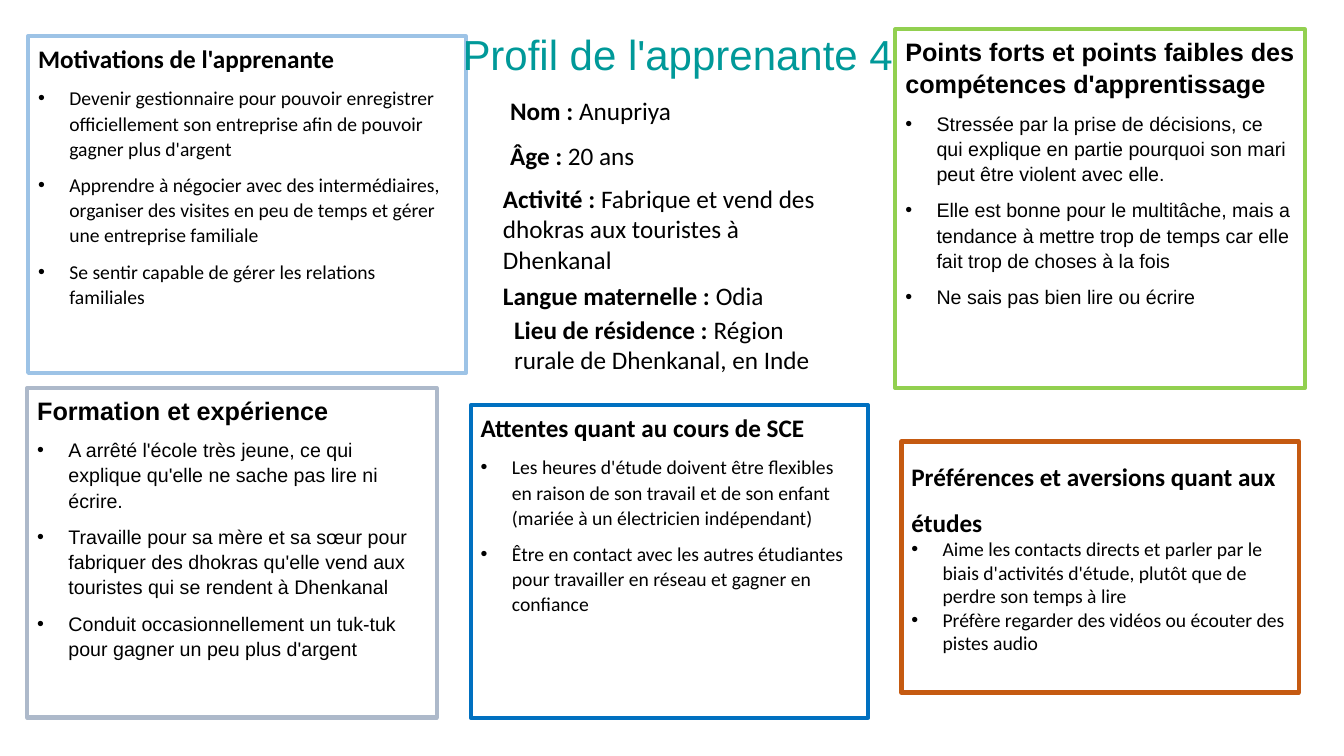
from dataclasses import dataclass

from lxml.etree import SubElement
from pptx import Presentation
from pptx.dml.color import RGBColor
from pptx.enum.shapes import MSO_SHAPE
from pptx.enum.text import MSO_ANCHOR, MSO_AUTO_SIZE, PP_ALIGN
from pptx.oxml.ns import qn
from pptx.util import Inches, Pt


@dataclass(frozen=True)
class Theme:
    ink: str = "000000"
    paper: str = "FFFFFF"
    title: str = "009999"
    attentes: str = "0070C0"
    motivations: str = "9DC3E6"
    points: str = "92D050"
    formation: str = "ADB9CA"
    preferences: str = "C55A11"
    sans: str = "Arial"
    body: str = "Calibri"
    title_size: int = 30
    heading_size: int = 18
    bullet_size: int = 14
    border: int = 3


theme = Theme()
presentation = Presentation()
presentation.slide_width = Inches(13.33)
presentation.slide_height = Inches(7.5)
slide = presentation.slides.add_slide(presentation.slide_layouts[6])


def place(left, top, width, height):
    """Turn percentages of the slide's width and height into lengths."""
    across, down = presentation.slide_width / 100, presentation.slide_height / 100
    return int(left * across), int(top * down), int(width * across), int(height * down)


def style(run, font, size, color, bold=False):
    run.font.name = font
    run.font.size = Pt(size)
    run.font.bold = bold
    run.font.color.rgb = RGBColor.from_string(color)


# Each panel: place, border, font, (heading spacing, bullet spacing, space after), lines
airy = (1.07, 1.07, 8)
compact = (1.5, 1.0, 0)
panels = [
    ((35.03, 53.6, 29.56, 41.33), theme.attentes, theme.body, airy, [
        "Attentes quant au cours de SCE",
        "Les heures d'étude doivent être flexibles en raison de son travail "
        "et de son enfant (mariée à un électricien indépendant)",
        "Être en contact avec les autres étudiantes pour travailler en réseau "
        "et gagner en confiance",
    ]),
    ((2.1, 4.8, 32.56, 44.53), theme.motivations, theme.body, airy, [
        "Motivations de l'apprenante",
        "Devenir gestionnaire pour pouvoir enregistrer officiellement son "
        "entreprise afin de pouvoir gagner plus d'argent",
        "Apprendre à négocier avec des intermédiaires, organiser des visites "
        "en peu de temps et gérer une entreprise familiale",
        "Se sentir capable de gérer les relations familiales",
    ]),
    ((66.62, 3.87, 30.46, 47.47), theme.points, theme.sans, airy, [
        "Points forts et points faibles des compétences d'apprentissage",
        "Stressée par la prise de décisions, ce qui explique en partie "
        "pourquoi son mari peut être violent avec elle.",
        "Elle est bonne pour le multitâche, mais a tendance à mettre trop de "
        "temps car elle fait trop de choses à la fois",
        "Ne sais pas bien lire ou écrire",
    ]),
    ((2.03, 51.33, 30.46, 43.6), theme.formation, theme.sans, airy, [
        "Formation et expérience",
        "A arrêté l'école très jeune, ce qui explique qu'elle ne sache pas "
        "lire ni écrire.",
        "Travaille pour sa mère et sa sœur pour fabriquer des dhokras qu'elle "
        "vend aux touristes qui se rendent à Dhenkanal",
        "Conduit occasionnellement un tuk-tuk pour gagner un peu plus d'argent",
    ]),
    ((67.07, 58.4, 29.56, 33.2), theme.preferences, theme.body, compact, [
        "Préférences et aversions quant aux études",
        "Aime les contacts directs et parler par le biais d'activités d'étude, "
        "plutôt que de perdre son temps à lire",
        "Préfère regarder des vidéos ou écouter des pistes audio",
    ]),
]

for position, border, font, spacing, lines in panels:
    heading_spacing, bullet_spacing, space_after = spacing
    panel = slide.shapes.add_shape(MSO_SHAPE.RECTANGLE, *place(*position))
    panel.shadow.inherit = False
    panel.fill.solid()
    panel.fill.fore_color.rgb = RGBColor.from_string(theme.paper)
    panel.line.color.rgb = RGBColor.from_string(border)
    panel.line.width = Pt(theme.border)
    frame = panel.text_frame
    frame.word_wrap = True
    frame.vertical_anchor = MSO_ANCHOR.TOP
    frame.text = "\n".join(lines)
    for number, paragraph in enumerate(frame.paragraphs):
        is_heading = number == 0
        paragraph.alignment = PP_ALIGN.LEFT
        paragraph.line_spacing = heading_spacing if is_heading else bullet_spacing
        paragraph.space_after = Pt(space_after)
        size = theme.heading_size if is_heading else theme.bullet_size
        style(paragraph.runs[0], font, size, theme.ink, is_heading)
        if not is_heading:
            properties = paragraph._p.get_or_add_pPr()
            properties.set("marL", str(Inches(0.31)))
            properties.set("indent", str(-Inches(0.31)))
            SubElement(properties, qn("a:buFont"), typeface=theme.sans)
            SubElement(properties, qn("a:buChar"), char="•")

facts = [
    ((37.21, 12, 28.21, 5.33), "Nom :", " Anupriya"),
    ((37.21, 17.87, 23.78, 5.33), "Âge :", " 20 ans"),
    ((36.68, 23.6, 25.88, 9.47), "Activité :",
     " Fabrique et vend des dhokras aux touristes à Dhenkanal"),
    ((36.68, 36.4, 25.88, 5.33), "Langue maternelle :", " Odia"),
    ((37.51, 40.93, 25.88, 9.47), "Lieu de résidence :",
     " Région rurale de Dhenkanal, en Inde"),
]

for position, label, value in facts:
    frame = slide.shapes.add_textbox(*place(*position)).text_frame
    frame.word_wrap = True
    frame.auto_size = MSO_AUTO_SIZE.SHAPE_TO_FIT_TEXT
    paragraph = frame.paragraphs[0]
    for words, bold in ((label, True), (value, False)):
        run = paragraph.add_run()
        run.text = words
        style(run, theme.body, theme.heading_size, theme.ink, bold)

title = slide.shapes.add_textbox(*place(33.68, 3.87, 33.83, 7.47)).text_frame
title.word_wrap = False
title.auto_size = MSO_AUTO_SIZE.SHAPE_TO_FIT_TEXT
title.text = "Profil de l'apprenante 4"
title.paragraphs[0].line_spacing = 0.9
title.paragraphs[0].space_before = Pt(10)
style(title.paragraphs[0].runs[0], theme.sans, theme.title_size, theme.title)

presentation.save("out.pptx")
